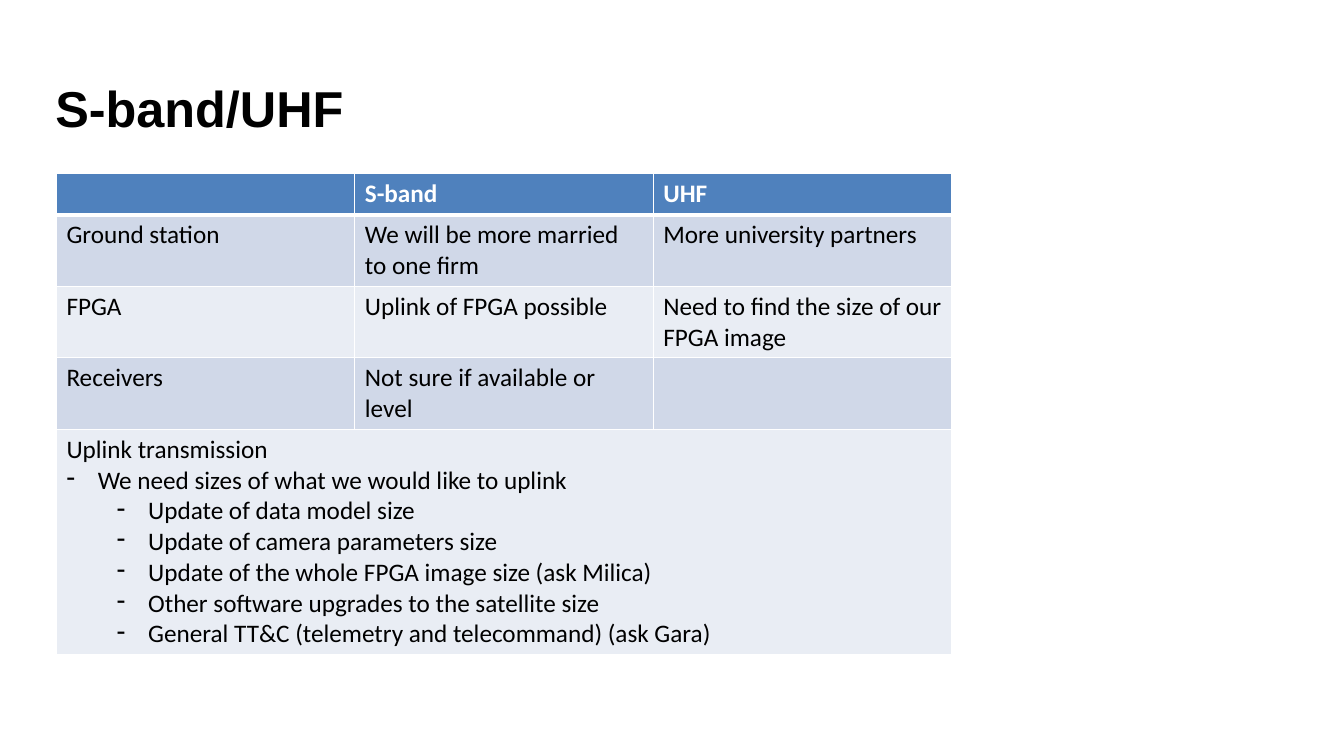
from lxml.etree import SubElement
from pptx import Presentation
from pptx.dml.color import RGBColor
from pptx.enum.text import MSO_ANCHOR
from pptx.oxml.ns import qn
from pptx.util import Inches, Pt

BLACK, WHITE = "000000", "FFFFFF"
HEADER_FILL, BAND_FILLS = "4F81BD", ("D0D8E8", "E9EDF4")
COLUMN_WIDTH = 2.96
ROW_HEIGHTS = (0.41, 0.71, 0.71, 0.71, 2.23)
BULLET_HANG = 0.31

COMPARISON = (
    ("", "S-band", "UHF"),
    ("Ground station", "We will be more married to one firm", "More university partners"),
    ("FPGA", "Uplink of FPGA possible", "Need to find the size of our FPGA image"),
    ("Receivers", "Not sure if available or level", ""),
)
# Each line is its text and its bullet level; None means no bullet.
UPLINK_LINES = (
    ("Uplink transmission", None),
    ("We need sizes of what we would like to uplink", 0),
    ("Update of data model size", 1),
    ("Update of camera parameters size", 1),
    ("Update of the whole FPGA image size (ask Milica)", 1),
    ("Other software upgrades to the satellite size", 1),
    ("General TT&C (telemetry and telecommand) (ask Gara)", 1),
)


def color(hex_string):
    return RGBColor.from_string(hex_string)


def write(paragraph, text, size=18, font="Calibri", ink=BLACK, bold=False):
    run = paragraph.add_run()
    run.text = text
    run.font.size = Pt(size)
    run.font.name = font
    run.font.bold = bold
    run.font.color.rgb = color(ink)


def add_dash(paragraph, level):
    paragraph.level = level
    properties = paragraph._p.get_or_add_pPr()
    properties.set("marL", str(Inches(BULLET_HANG + 0.5 * level)))
    properties.set("indent", str(-Inches(BULLET_HANG)))
    SubElement(properties, qn("a:buFontTx"))
    SubElement(properties, qn("a:buChar"), char="-")


def style_cell(cell, fill, top=1, bottom=1):
    """Set white borders, with top and bottom widths in points, and the fill."""
    properties = cell._tc.get_or_add_tcPr()
    for side, width in (("L", 1), ("R", 1), ("T", top), ("B", bottom)):
        border = SubElement(properties, qn(f"a:ln{side}"), w=str(Pt(width)))
        solid = SubElement(border, qn("a:solidFill"))
        SubElement(solid, qn("a:srgbClr"), val=WHITE)
    cell.fill.solid()
    cell.fill.fore_color.rgb = color(fill)


def add_title(slide, left, top, width, height):
    frame = slide.shapes.add_textbox(
        Inches(left), Inches(top), Inches(width), Inches(height)).text_frame
    frame.word_wrap = True
    frame.vertical_anchor = MSO_ANCHOR.MIDDLE
    frame.margin_left = frame.margin_right = Inches(0.1)
    frame.margin_top = frame.margin_bottom = Inches(0.1)
    write(frame.paragraphs[0], "S-band/UHF", size=36, font="Arial", bold=True)


def add_uplink_notes(cell):
    frame = cell.text_frame
    for index, (text, level) in enumerate(UPLINK_LINES):
        paragraph = frame.add_paragraph() if index else frame.paragraphs[0]
        if level is not None:
            add_dash(paragraph, level)
        write(paragraph, text)


def add_comparison(slide, left, top):
    columns = len(COMPARISON[0])
    table = slide.shapes.add_table(
        len(ROW_HEIGHTS), columns, Inches(left), Inches(top),
        Inches(COLUMN_WIDTH * columns), Inches(sum(ROW_HEIGHTS))).table
    for column in table.columns:
        column.width = Inches(COLUMN_WIDTH)
    for index, height in enumerate(ROW_HEIGHTS):
        table.rows[index].height = Inches(height)
        fill = BAND_FILLS[(index - 1) % 2] if index else HEADER_FILL
        for cell in table.rows[index].cells:
            style_cell(cell, fill, top=3 if index == 1 else 1,
                       bottom=1 if index else 3)

    for row, texts in enumerate(COMPARISON):
        for column, text in enumerate(texts):
            if text:
                write(table.cell(row, column).text_frame.paragraphs[0], text,
                      ink=BLACK if row else WHITE, bold=row == 0)

    last = len(ROW_HEIGHTS) - 1
    uplink = table.cell(last, 0)
    uplink.merge(table.cell(last, columns - 1))
    add_uplink_notes(uplink)


def main():
    presentation = Presentation()
    presentation.slide_width = Inches(13.33)
    presentation.slide_height = Inches(7.5)
    slide = presentation.slides.add_slide(presentation.slide_layouts[6])
    add_title(slide, 0.45, 0.65, 12.42, 0.84)
    add_comparison(slide, 0.56, 1.72)
    presentation.save("out.pptx")


if __name__ == "__main__":
    main()
